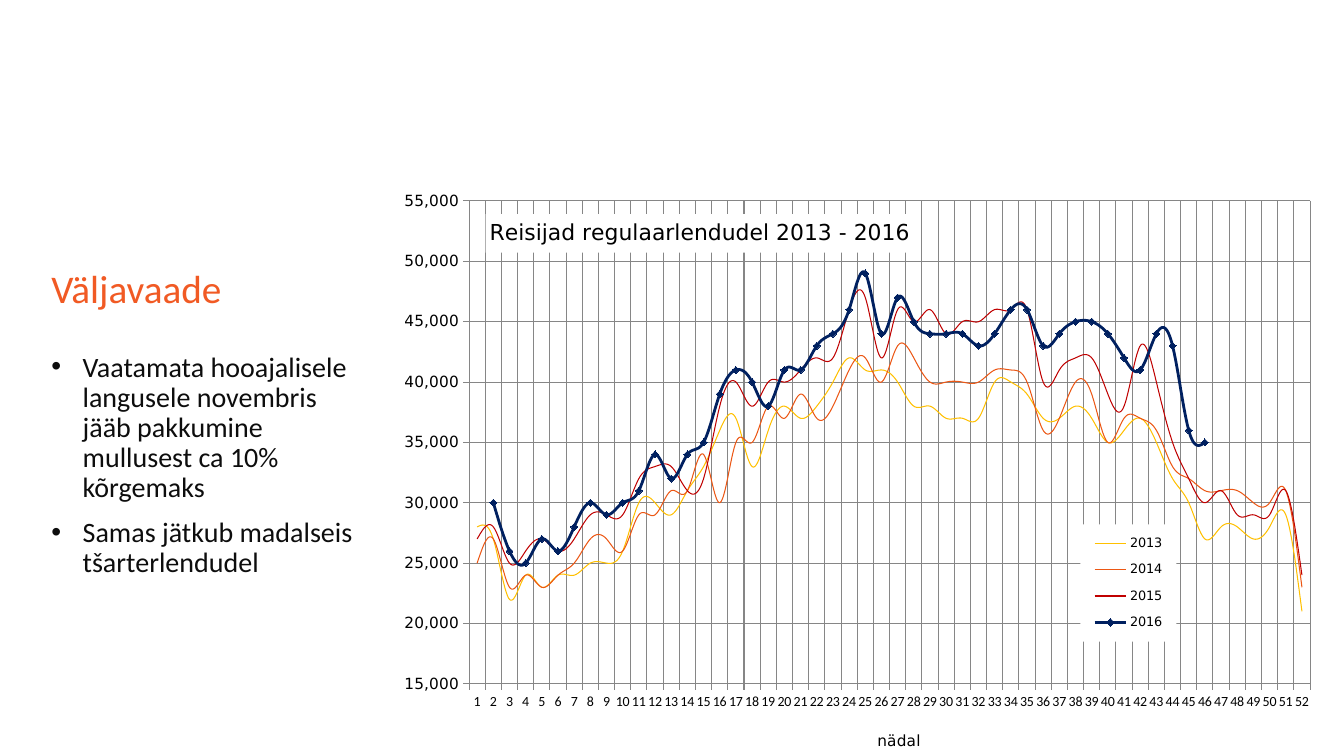
"""Build the outlook slide with weekly scheduled-flight passengers, 2013 to 2016."""
from lxml import etree
from pptx import Presentation
from pptx.chart.data import CategoryChartData
from pptx.dml.color import RGBColor
from pptx.enum.chart import XL_CHART_TYPE, XL_LEGEND_POSITION, XL_MARKER_STYLE, XL_TICK_MARK
from pptx.enum.text import MSO_ANCHOR, PP_ALIGN
from pptx.oxml import parse_xml
from pptx.oxml.ns import nsdecls, qn
from pptx.util import Inches, Pt

LINE_CHART = XL_CHART_TYPE.LINE
LEGEND_RIGHT = XL_LEGEND_POSITION.RIGHT
DIAMOND, NO_MARKER = XL_MARKER_STYLE.DIAMOND, XL_MARKER_STYLE.NONE
TICK_OUTSIDE = XL_TICK_MARK.OUTSIDE
MIDDLE, TOP = MSO_ANCHOR.MIDDLE, MSO_ANCHOR.TOP
LEFT = PP_ALIGN.LEFT

LEFT_MARGIN = Inches(0.41)
BULLETS = [
    "Vaatamata hooajalisele langusele novembris jääb pakkumine mullusest ca 10% kõrgemaks",
    "Samas jätkub madalseis tšarterlendudel",
]
WEEKS = range(1, 53)
THOUSANDS = {
    "2013": [28, 27, 22, 24, 23, 24, 24, 25, 25, 26, 30, 30, 29, 31, 33, 36, 37, 33,
             36, 38, 37, 38, 40, 42, 41, 41, 40, 38, 38, 37, 37, 37, 40, 40, 39, 37,
             37, 38, 37, 35, 36, 37, 35, 32, 30, 27, 28, 28, 27, 28, 29, 21],
    "2014": [25, 27, 23, 24, 23, 24, 25, 27, 27, 26, 29, 29, 31, 31, 34, 30, 35, 35,
             38, 37, 39, 37, 38, 41, 42, 40, 43, 42, 40, 40, 40, 40, 41, 41, 40, 36,
             37, 40, 39, 35, 37, 37, 36, 33, 32, 31, 31, 31, 30, 30, 31, 23],
    "2015": [27, 28, 25, 26, 27, 26, 27, 29, 29, 29, 32, 33, 33, 31, 32, 38, 40, 38,
             40, 40, 41, 42, 42, 46, 47, 42, 46, 45, 46, 44, 45, 45, 46, 46, 46, 40,
             41, 42, 42, 39, 38, 43, 40, 35, 32, 30, 31, 29, 29, 29, 31, 24],
    "2016": [None, 30, 26, 25, 27, 26, 28, 30, 29, 30, 31, 34, 32, 34, 35, 39, 41, 40,
             38, 41, 41, 43, 44, 46, 49, 44, 47, 45, 44, 44, 44, 43, 44, 46, 46, 43,
             44, 45, 45, 44, 42, 41, 44, 43, 36, 35] + [None] * 6,
}
LINE_COLORS = {"2013": "FFC000", "2014": "EC5714", "2015": "C00000", "2016": "002060"}


def style_font(font, name, size, color):
    font.name, font.size, font.bold = name, Pt(size), False
    font.color.rgb = RGBColor.from_string(color)


def place(element, index, **shares):
    for old_layout in element.findall(qn("c:layout")):
        element.remove(old_layout)
    settings = "".join(f'<c:{name} val="{value}"/>' for name, value in shares.items())
    element.insert(index, parse_xml(
        f'<c:layout {nsdecls("c")}><c:manualLayout>{settings}</c:manualLayout></c:layout>'))


presentation = Presentation()
presentation.slide_width, presentation.slide_height = Inches(13.33), Inches(7.5)
slide = presentation.slides.add_slide(presentation.slide_layouts[1])

title = slide.shapes.title
title.left, title.top, title.width, title.height = LEFT_MARGIN, Inches(2.61), Inches(4.45), Inches(0.56)
title.text_frame.text = "Väljavaade"
title.text_frame.vertical_anchor = MIDDLE
heading = title.text_frame.paragraphs[0]
heading.alignment, heading.line_spacing = LEFT, 0.9
style_font(heading.font, "Calibri", 28, "F15A24")

body = slide.placeholders[1]
body.left, body.top, body.width, body.height = LEFT_MARGIN, Inches(3.45), Inches(3.35), Inches(3.06)
body.text_frame.text = "\n".join(BULLETS)
body.text_frame.vertical_anchor = TOP
for number, paragraph in enumerate(body.text_frame.paragraphs):
    properties = paragraph._p.get_or_add_pPr()
    properties.set("marL", str(Inches(0.31)))
    properties.set("indent", str(-Inches(0.31)))
    etree.SubElement(properties, qn("a:buChar")).set("char", "•")
    paragraph.alignment, paragraph.line_spacing = LEFT, 0.9
    paragraph.space_before = Pt(10 if number else 0)
    style_font(paragraph.font, "Calibri", 20, "0D0D0D")

chart_data = CategoryChartData(number_format="#,##0")
chart_data.categories = [str(week) for week in WEEKS]
for year, thousands in THOUSANDS.items():
    chart_data.add_series(year, [value and value * 1000 for value in thousands])
chart = slide.shapes.add_chart(
    LINE_CHART, Inches(4.01), Inches(1.68), Inches(9.12), Inches(5.93), chart_data).chart
style_font(chart.font, "Calibri", 10, "000000")
chart.plots[0].vary_by_categories = False
place(chart._chartSpace.chart.plotArea, 0, layoutTarget="inner", xMode="edge", yMode="edge",
      x=0.066, y=0.053, w=0.919, h=0.808)

for series in chart.plots[0].series:
    color = RGBColor.from_string(LINE_COLORS[series.name])
    current = series.name == "2016"
    series.smooth = True
    series.format.line.color.rgb = color
    series.format.line.width = Pt(2 if current else 0.75)
    series.marker.style = DIAMOND if current else NO_MARKER
    if current:
        series.marker.size = 5
        series.marker.format.fill.solid()
        series.marker.format.fill.fore_color.rgb = color
        series.marker.format.line.color.rgb = color

weeks_axis, passengers_axis = chart.category_axis, chart.value_axis
for axis, font_name, size in ((weeks_axis, "Calibri", 10), (passengers_axis, "DejaVu Sans", 11)):
    style_font(axis.tick_labels.font, font_name, size, "000000")
    axis.major_tick_mark = TICK_OUTSIDE
    axis.has_major_gridlines = True
    for line in (axis.format.line, axis.major_gridlines.format.line):
        line.color.rgb = RGBColor.from_string("868686")
        line.width = Pt(0.75)
passengers_axis.minimum_scale, passengers_axis.maximum_scale = 15000, 55000
passengers_axis.major_unit = 5000
passengers_axis.tick_labels.number_format = "#,##0"
passengers_axis.tick_labels.number_format_is_linked = False
label_skip = parse_xml(f'<c:tickLblSkip {nsdecls("c")} val="1"/>')
weeks_axis._element.find(qn("c:noMultiLvlLbl")).addprevious(label_skip)

white = RGBColor.from_string("FFFFFF")
for chart_title, text, size, x, y in (
    (chart.chart_title, "Reisijad regulaarlendudel 2013 - 2016", 15.7, 0.084, 0.075),
    (weeks_axis.axis_title, "nädal", 11, 0.509, 0.933),
):
    chart_title.text_frame.text = text
    style_font(chart_title.text_frame.paragraphs[0].font, "DejaVu Sans", size, "000000")
    chart_title.format.fill.solid()
    chart_title.format.fill.fore_color.rgb = white
    place(chart_title._element, 1, xMode="edge", yMode="edge", x=x, y=y)
chart.chart_title._element.find(qn("c:overlay")).set("val", "1")

chart.has_legend = True
legend = chart.legend
legend.position, legend.include_in_layout = LEGEND_RIGHT, True
style_font(legend.font, "DejaVu Sans", 9.2, "000000")
place(legend._element, 1, xMode="edge", yMode="edge", x=0.734, y=0.594, w=0.105, h=0.196)
legend_fill = parse_xml(
    f'<c:spPr {nsdecls("c", "a")}><a:solidFill><a:srgbClr val="FFFFFF"/></a:solidFill></c:spPr>')
legend._element.find(qn("c:txPr")).addprevious(legend_fill)

presentation.save("out.pptx")
